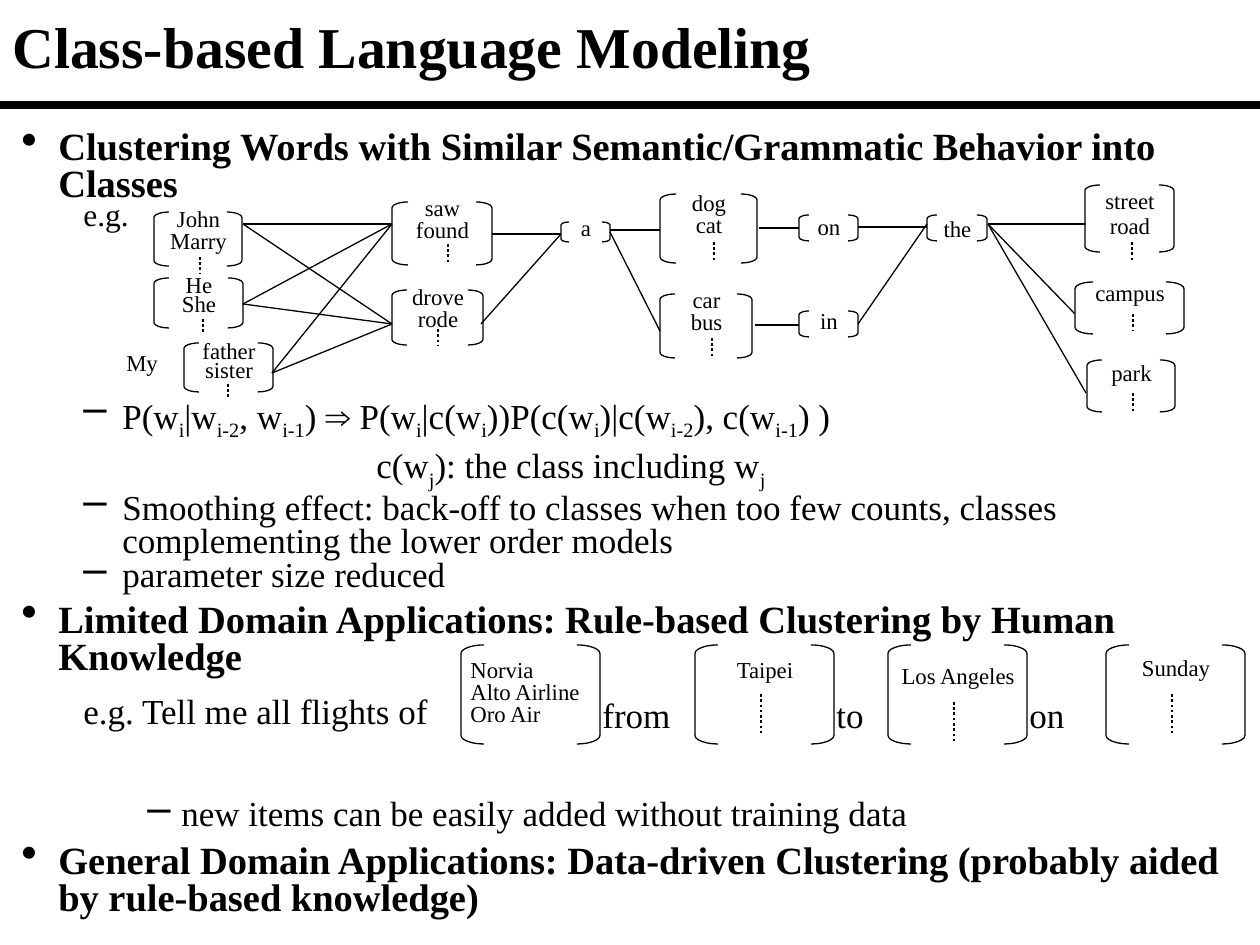
import pptx
import pptx.util
import pptx.dml.color
import pptx.enum.dml
import pptx.enum.shapes
import pptx.enum.text
import pptx.oxml.ns
import lxml.etree

FONT = "Times New Roman"
INK = "000000"
SHAPE = pptx.enum.shapes.MSO_SHAPE
ALIGN = pptx.enum.text.PP_ALIGN

NODES = [
    ((154, 212, 88, 54), ["John", "Marry"], 0.8, -8, (46, 45, 16)),
    ((154, 278, 89, 50), ["He", "She"], 0.7, -6, (49, 41, 15)),
    ((184, 343, 89, 49), ["father", "sister"], 0.7, -5, (44, 41, 14)),
    ((392, 202, 100, 63), ["saw", "found"], 0.8, -9, (56, 42, 19)),
    ((392, 290, 91, 55), ["drove", "rode"], 0.8, -8, (46, 39, 16)),
    ((561, 222, 49, 20), ["a"], 0.8, -9, None),
    ((660, 194, 97, 69), ["dog", "cat"], 0.8, -6, (54, 48, 20)),
    ((660, 294, 92, 64), ["car", "bus"], 0.8, -9, (52, 44, 19)),
    ((799, 215, 59, 26), ["on"], 0.8, -3, None),
    ((799, 311, 59, 26), ["in"], 0.8, -5, None),
    ((927, 215, 60, 26), ["the"], 0.8, -1, None),
    ((1085, 185, 89, 67), ["street", "road"], 0.9, -1, (47, 57, 18)),
    ((1075, 282, 109, 52), ["campus"], 0.8, -4, (58, 32, 16)),
    ((1087, 360, 88, 52), ["park"], 0.7, 0, (46, 33, 18)),
]
LINKS = [
    (492, 234, 561, 234), (561, 234, 481, 324), (610, 230, 660, 230),
    (610, 232, 660, 331), (759, 228, 799, 228), (755, 325, 799, 325),
    (858, 227, 927, 227), (927, 224, 858, 324), (988, 224, 1086, 224),
    (988, 224, 1075, 314), (988, 224, 1086, 393),
]
SLOTS = [
    (461, ["Norvia", "Alto Airline", "Oro Air"], 10, 3, ALIGN.LEFT, None, "from"),
    (695, ["Taipei"], 10, 0, ALIGN.CENTER, (66, 49, 39), "to"),
    (888, ["Los Angeles"], 16, 10, ALIGN.CENTER, (66, 57, 39), "on"),
    (1106, ["Sunday"], 8, 0, ALIGN.CENTER, (66, 49, 39), ""),
]


def px(n):
    """Turn px into EMU."""
    return pptx.util.Emu(round(n * 914400 / 126))


def hue(code):
    """Turn a hex string into a colour."""
    return pptx.dml.color.RGBColor.from_string(code)


def add(para, text, size, bold=False, base=0):
    """Add one run to a paragraph."""
    run = para.add_run()
    run.text = text
    run.font.name, run.font.size, run.font.bold = FONT, pptx.util.Pt(size), bold
    run.font.color.rgb = hue(INK)
    if base:
        run._r.get_or_add_rPr().set("baseline", str(base * 1000))


def frame(slide, box):
    """Place a wrapping text box and return its text frame."""
    text = slide.shapes.add_textbox(*map(px, box)).text_frame
    text.word_wrap = True
    return text


def paras(text, count):
    """Yield the given number of paragraphs of a text frame."""
    for i in range(count):
        yield text.add_paragraph() if i else text.paragraphs[0]


def line(slide, ends, width=0.75, dots=False):
    """Draw a straight line."""
    rule = slide.shapes.add_connector(
        pptx.enum.shapes.MSO_CONNECTOR.STRAIGHT, *map(px, ends))
    rule.line.width = pptx.util.Pt(width)
    rule.line.color.rgb = hue(INK)
    if dots:
        rule.line.dash_style = pptx.enum.dml.MSO_LINE.ROUND_DOT
    lxml.etree.SubElement(rule._element.spPr, pptx.oxml.ns.qn("a:effectLst"))


def group(slide, box, words, space, top, dots, pad=0, align=ALIGN.CENTER):
    """Draw a word class: two brackets, its words and a dotted tail."""
    x, y, w, h = box
    arm = round(w * 0.165)
    for kind, left in ((SHAPE.LEFT_BRACKET, x), (SHAPE.RIGHT_BRACKET, x + w - arm)):
        side = slide.shapes.add_shape(kind, *map(px, (left, y, arm, h)))
        side.adjustments[0] = 0.375
        side.shadow.inherit = False
        side.fill.background()
        side.line.color.rgb = hue(INK)
        side.line.width = pptx.util.Pt(0.75)
    text = frame(slide, (x - pad, y + top, w + 1 + 2 * pad, 19 * len(words) + 6))
    for para, word in zip(paras(text, len(words)), words):
        para.alignment, para.line_spacing = align, space
        add(para, word, 13)
    if dots:
        dx, dy, size = dots
        line(slide, (x + dx, y + dy, x + dx, y + dy + size), 1.5, True)


def title(slide, box):
    """Place the heading with the heavy rule below it."""
    x, y, w, h = box
    text = frame(slide, (x, y, w, h))
    text.vertical_anchor = pptx.enum.text.MSO_ANCHOR.MIDDLE
    para = text.paragraphs[0]
    para.line_spacing = 0.9
    add(para, "Class-based Language Modeling", 33, True)
    line(slide, (x, y + h + 6, x + w, y + h + 6), 4.5)


def style(para, left, hang, mark, before, space):
    """Set indents, gap, line spacing and bullet of a paragraph."""
    para.line_spacing, para.space_before = space, pptx.util.Pt(before)
    prop = para._p.get_or_add_pPr()
    prop.set("marL", str(px(left)))
    prop.set("indent", str(px(-hang)))
    if mark:
        qn = pptx.oxml.ns.qn
        lxml.etree.SubElement(prop, qn("a:buSzPct")).set("val", "120000")
        lxml.etree.SubElement(prop, qn("a:buChar")).set("char", mark)


def body(slide, box):
    """Place the outline, where each second part between bars is a subscript."""
    head, item, plain = (37, 37, "•"), (101, 39, "–"), (62, 0, "")
    rows = [
        (head, 0, 22, "Clustering Words with Similar Semantic/Grammatic Behavior into Classes"),
        (plain, 0, 18, "e.g."),
        (item, 95.5, 20, "P(w_i_|w_i-2_, w_i-1_) ⇒ P(w_i_|c(w_i_))P(c(w_i_)|c(w_i-2_), c(w_i-1_) )"),
        ((355, 0, ""), 6.5, 20, "c(w_j_): the class including w_j"),
        (item, 4, 20, "Smoothing effect: back-off to classes when too few counts, "
         "classes complementing the lower order models"),
        (item, 0, 20, "parameter size reduced"),
        (head, 5.5, 22, "Limited Domain Applications: Rule-based Clustering by Human Knowledge"),
        (plain, 11.5, 20, "e.g. Tell me all flights of"),
        ((160, 34, "–"), 39, 20, "new items can be easily added without training data"),
        (head, 6.5, 22, "General Domain Applications: Data-driven Clustering "
         "(probably aided by rule-based knowledge)"),
    ]
    text = frame(slide, box)
    for para, (kind, gap, size, words) in zip(paras(text, len(rows)), rows):
        style(para, *kind, gap, 0.7 if size == 18 else 0.8)
        for i, part in enumerate(words.split("_")):
            add(para, part, size, kind is head, -25 * (i % 2))


def graph(slide):
    """Draw the network of word classes."""
    for node in NODES:
        group(slide, *node)
    add(frame(slide, (114, 343, 78, 62)).paragraphs[0], "My", 13)
    starts, goals = ((243, 224), (243, 304), (272, 373)), ((392, 224), (392, 324))
    for ends in [a + b for a in starts for b in goals] + LINKS:
        line(slide, ends)


def flights(slide, top):
    """Draw the slots of the flight request and the words between them."""
    for x, words, drop, pad, align, dots, link in SLOTS:
        group(slide, (x, top, 139, 99), words, 0.8, drop, dots, pad, align)
        if link:
            text = frame(slide, (x + 129, top + 42, 100, 52))
            add(text.paragraphs[0], link, 20)


def main():
    """Build and save the slide."""
    deck = pptx.Presentation()
    deck.slide_width, deck.slide_height = px(1260), px(945)
    slide = deck.slides.add_slide(deck.slide_layouts[6])
    title(slide, (0, 0, 1260, 99))
    body(slide, (9, 125, 1236, 805))
    graph(slide)
    flights(slide, 645)
    deck.save("out.pptx")


if __name__ == "__main__":
    main()
